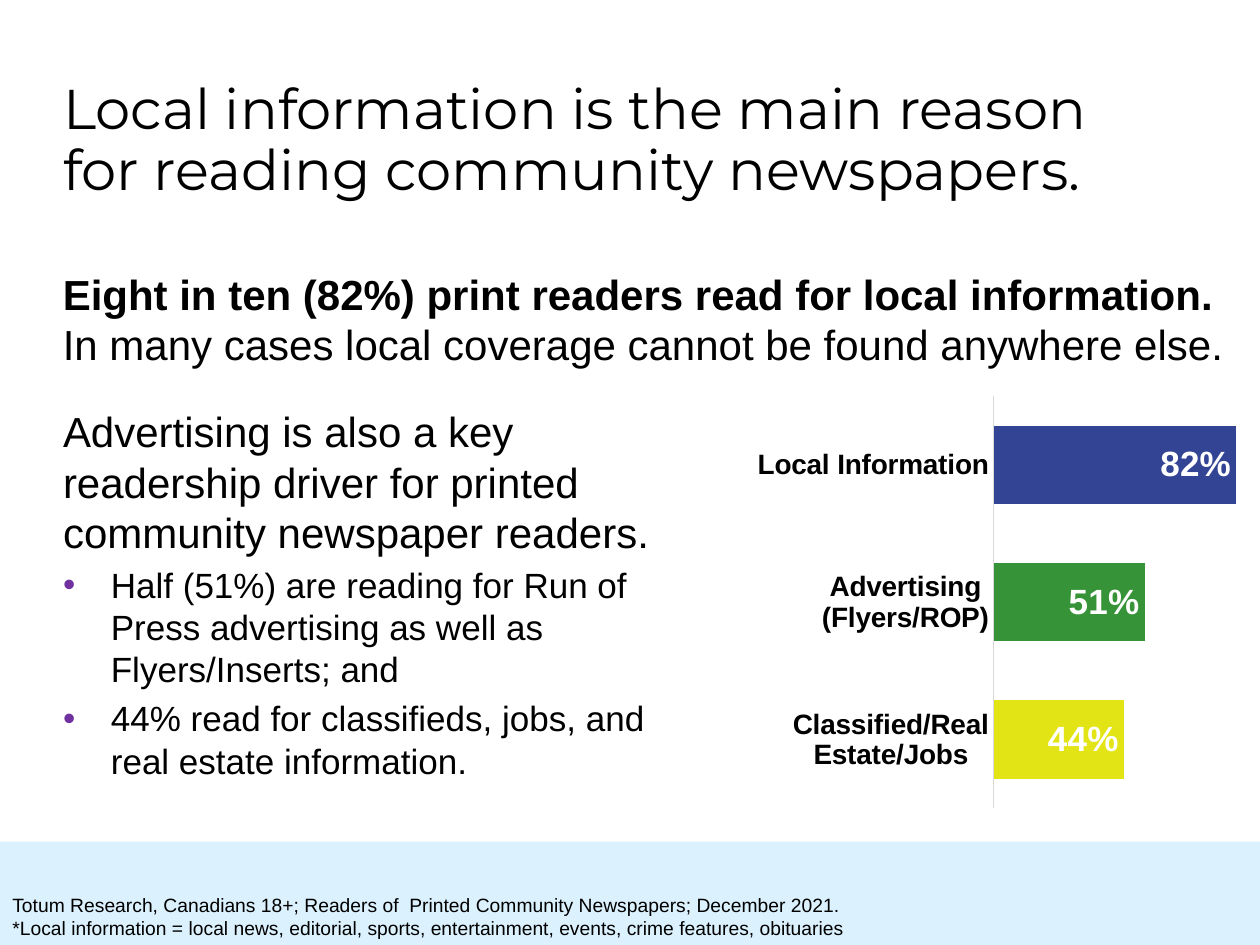
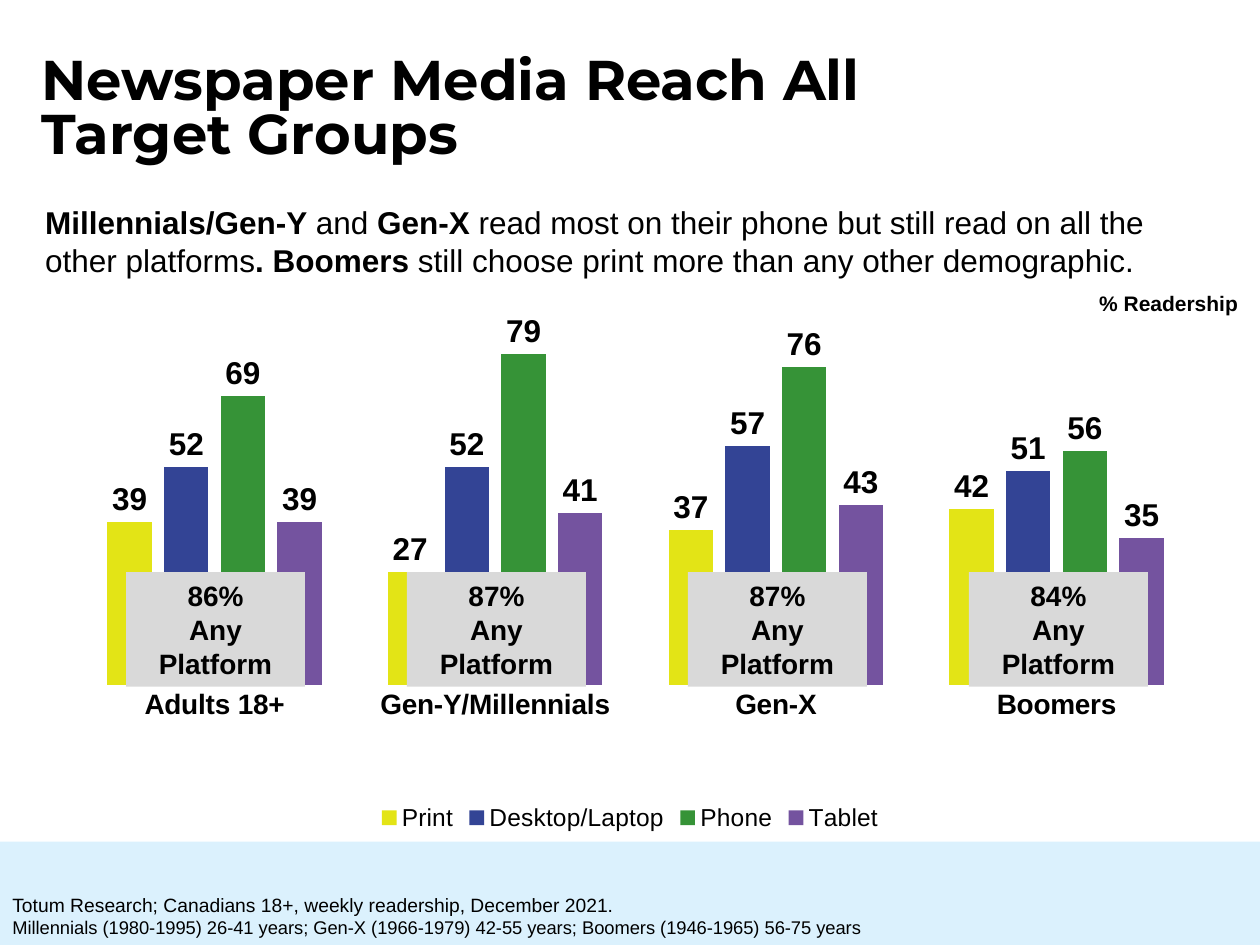
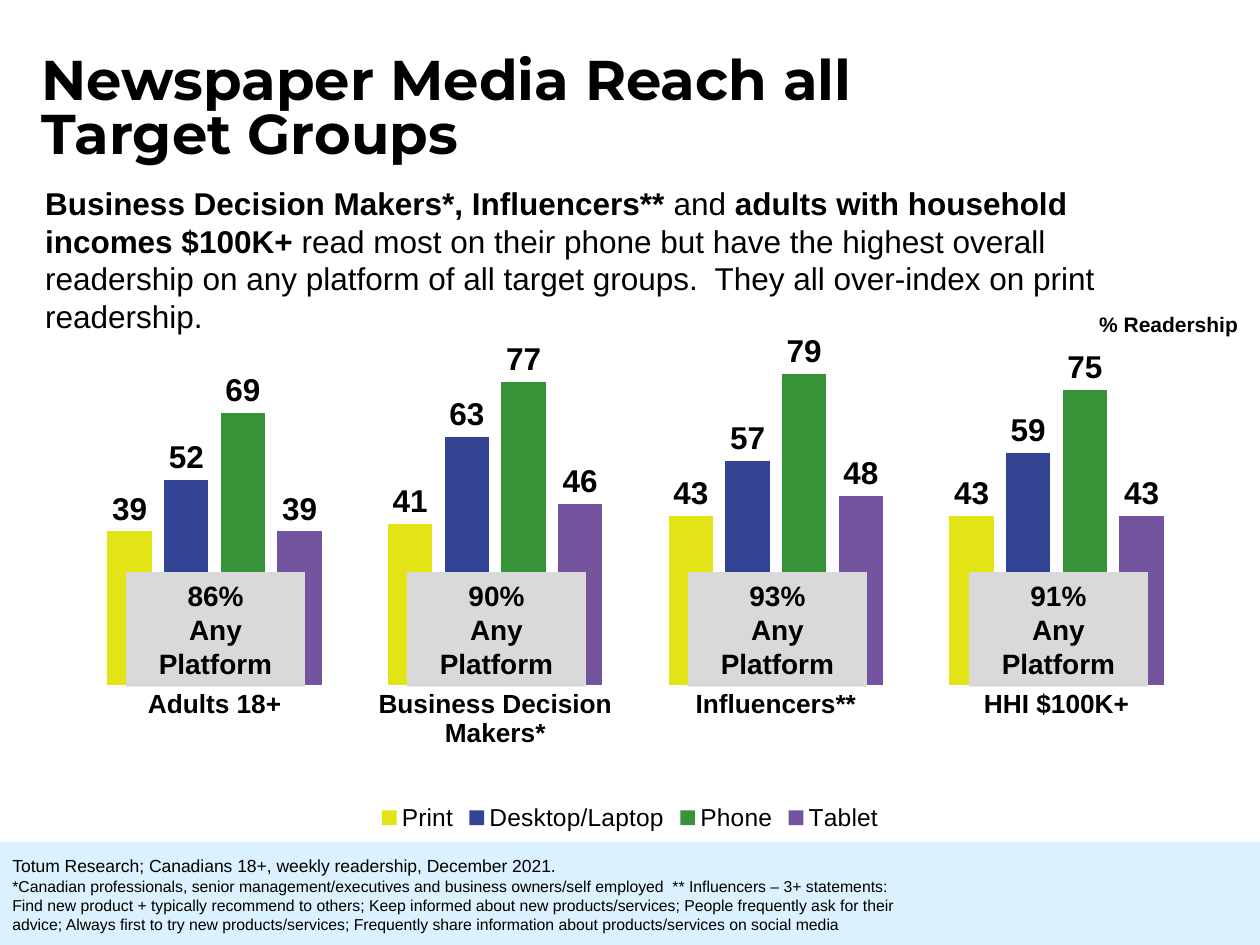
from dataclasses import dataclass

from lxml import etree
from pptx import Presentation
from pptx.chart.data import CategoryChartData
from pptx.dml.color import RGBColor
from pptx.enum.chart import XL_CHART_TYPE, XL_LABEL_POSITION, XL_LEGEND_POSITION, XL_TICK_MARK
from pptx.enum.shapes import MSO_SHAPE
from pptx.enum.text import MSO_ANCHOR, MSO_AUTO_SIZE, PP_ALIGN
from pptx.oxml.ns import qn
from pptx.util import Inches, Pt

BAR, COLUMN = XL_CHART_TYPE.BAR_CLUSTERED, XL_CHART_TYPE.COLUMN_CLUSTERED
INSIDE_END, OUTSIDE_END = XL_LABEL_POSITION.INSIDE_END, XL_LABEL_POSITION.OUTSIDE_END
LEGEND_BOTTOM, NO_TICK = XL_LEGEND_POSITION.BOTTOM, XL_TICK_MARK.NONE
RECTANGLE = MSO_SHAPE.RECTANGLE
TOP, MIDDLE = MSO_ANCHOR.TOP, MSO_ANCHOR.MIDDLE
NO_FIT = MSO_AUTO_SIZE.NONE
LEFT, CENTER = PP_ALIGN.LEFT, PP_ALIGN.CENTER
TITLE_AND_CONTENT, TITLE_ONLY = 1, 5


def rgb(value):
    return RGBColor.from_string(value)


@dataclass(frozen=True)
class Theme:
    heading_font: str = "Montserrat"
    body_font: str = "Arial"
    text: RGBColor = rgb("000000")
    white: RGBColor = rgb("FFFFFF")
    band: RGBColor = rgb("DBF1FD")
    badge: RGBColor = rgb("D9D9D9")
    axis: RGBColor = rgb("D9D9D9")
    yellow: RGBColor = rgb("E3E416")
    blue: RGBColor = rgb("334495")
    green: RGBColor = rgb("369337")
    purple: RGBColor = rgb("74539F")
    bullet: str = "7030A0"
    title_size: float = 32
    lead_size: float = 24
    list_size: float = 20
    intro_size: float = 18
    label_size: float = 16
    legend_size: float = 14
    note_size: float = 12


T = Theme()
PLATFORM_COLORS = {"Print": T.yellow, "Desktop/Laptop": T.blue,
                   "Phone": T.green, "Tablet": T.purple}


def set_all(target, **values):
    for name, value in values.items():
        setattr(target, name, value)


def style_font(font, size, bold=False, color=T.text, name=T.body_font):
    set_all(font, size=Pt(size), bold=bold, name=name)
    font.color.rgb = color


def place(shape, box):
    for name, value in zip(("left", "top", "width", "height"), box):
        setattr(shape, name, Inches(value))


def write(p, runs, size, align=LEFT, name=T.body_font):
    """Fill a paragraph with (text, bold) runs."""
    p.alignment = align
    for text, bold in runs:
        r = p.add_run()
        r.text = text
        style_font(r.font, size, bold, name=name)


def write_lines(tf, lines, align=LEFT):
    """Write one paragraph per (runs, size) line."""
    for i, (runs, size) in enumerate(lines):
        write(tf.add_paragraph() if i else tf.paragraphs[0], runs, size, align)


def add_text(s, box, lines, align=LEFT):
    tf = s.shapes.add_textbox(*map(Inches, box)).text_frame
    tf.word_wrap = True
    write_lines(tf, lines, align)


def add_rectangle(s, box, fill):
    sp = s.shapes.add_shape(RECTANGLE, *map(Inches, box))
    sp.shadow.inherit = False
    sp.fill.solid()
    sp.fill.fore_color.rgb = fill
    sp.line.fill.background()
    return sp


def add_slide(prs, layout, title, box, spacing, bold=False, anchor=TOP):
    """Start a slide with its title and the footer band."""
    s = prs.slides.add_slide(prs.slide_layouts[layout])
    place(s.shapes.title, box)
    tf = s.shapes.title.text_frame
    set_all(tf, word_wrap=True, auto_size=NO_FIT, vertical_anchor=anchor)
    p = tf.paragraphs[0]
    p.line_spacing = spacing
    write(p, [(title, bold)], T.title_size, name=T.heading_font)
    add_rectangle(s, (0, 6.68, 10, 0.82), T.band)
    return s


def set_bullet(p, indent=0.38):
    pPr = p._p.get_or_add_pPr()
    pPr.set("marL", str(Inches(indent)))
    pPr.set("indent", str(-Inches(indent)))
    color = etree.SubElement(pPr, qn("a:buClr"))
    etree.SubElement(color, qn("a:srgbClr")).set("val", T.bullet)
    etree.SubElement(pPr, qn("a:buChar")).set("char", "•")


def clear_bullet(p):
    pPr = p._p.get_or_add_pPr()
    pPr.set("marL", "0")
    pPr.set("indent", "0")
    etree.SubElement(pPr, qn("a:buNone"))


def fill_body(s, box, lead, bullets):
    body = s.placeholders[1]
    place(body, box)
    tf = body.text_frame
    set_all(tf, word_wrap=True, auto_size=NO_FIT, vertical_anchor=TOP)
    p = tf.paragraphs[0]
    p.space_before = Pt(0)
    clear_bullet(p)
    write(p, [(lead, False)], T.lead_size)
    for text in bullets:
        p = tf.add_paragraph()
        p.space_before = Pt(4)
        set_bullet(p)
        write(p, [(text, False)], T.list_size)


def set_plot_layout(chart, area):
    """Fix the inner plot area, as fractions of the chart."""
    plot_area = chart._chartSpace.chart.plotArea
    for old in plot_area.findall(qn("c:layout")):
        plot_area.remove(old)
    layout = etree.Element(qn("c:layout"))
    manual = etree.SubElement(layout, qn("c:manualLayout"))
    values = {"layoutTarget": "inner", "xMode": "edge", "yMode": "edge",
              **dict(zip("xywh", area))}
    for tag, value in values.items():
        etree.SubElement(manual, qn(f"c:{tag}")).set("val", str(value))
    plot_area.insert(0, layout)


def add_bars(s, kind, box, categories, series, area, top, gap, cat_size, number_format="General"):
    data = CategoryChartData(number_format=number_format)
    data.categories = categories
    for name, values in series.items():
        data.add_series(name, values)
    chart = s.shapes.add_chart(kind, *map(Inches, box), data).chart
    set_all(chart, has_title=False, has_legend=False)
    style_font(chart.font, T.intro_size)
    set_plot_layout(chart, area)
    set_all(chart.plots[0], gap_width=gap, vary_by_categories=False)
    set_all(chart.value_axis, visible=False, has_major_gridlines=False,
            minimum_scale=0, maximum_scale=top)
    set_all(chart.category_axis, major_tick_mark=NO_TICK, has_major_gridlines=False)
    style_font(chart.category_axis.tick_labels.font, cat_size, True)
    return chart


def fill_bar(part, color):
    part.format.fill.solid()
    part.format.fill.fore_color.rgb = color


def label_series(series, position, size, color=T.text, number_format="General"):
    labels = series.data_labels
    set_all(labels, show_value=True, position=position,
            number_format=number_format, number_format_is_linked=False)
    style_font(labels.font, size, True, color)


def add_reasons_chart(s):
    reasons = {"Classified/Real Estate/Jobs": (0.44, T.yellow),
               "Advertising (Flyers/ROP)": (0.51, T.green),
               "Local Information": (0.82, T.blue)}
    chart = add_bars(s, BAR, (5.6, 3.04, 4.4, 3.48), list(reasons),
                     {"Series 1": [value for value, _ in reasons.values()]},
                     (0.52, 0.03, 0.48, 0.94), 0.9, 75, T.label_size, "0%")
    line = chart.category_axis.format.line
    line.color.rgb = T.axis
    line.width = Pt(0.75)
    series = chart.plots[0].series[0]
    for i, (_, color) in enumerate(reasons.values()):
        fill_bar(series.points[i], color)
    label_series(series, INSIDE_END, T.list_size, T.white, "0%")


def add_platform_chart(s, groups, plot_top, cat_size):
    """Chart each group's four platform values; groups maps name to (values, any-platform share)."""
    columns = zip(*(values for values, _ in groups.values()))
    chart = add_bars(s, COLUMN, (0.5, 1.81, 9, 4.83), list(groups),
                     dict(zip(PLATFORM_COLORS, columns)),
                     (0.01, plot_top, 0.99, round(0.751 - plot_top, 3)), 90, 150, cat_size)
    chart.plots[0].overlap = -28
    chart.category_axis.format.line.fill.background()
    for series in chart.plots[0].series:
        fill_bar(series, PLATFORM_COLORS[series.name])
        label_series(series, OUTSIDE_END, T.intro_size)
    chart.has_legend = True
    set_all(chart.legend, position=LEGEND_BOTTOM, include_in_layout=False)
    style_font(chart.legend.font, T.legend_size)


def add_badges(s, groups):
    for i, (_, share) in enumerate(groups.values()):
        badge = add_rectangle(s, (1 + 2.23 * i, 4.54, 1.42, 0.91), T.badge)
        set_all(badge.text_frame, word_wrap=True, vertical_anchor=MIDDLE)
        write_lines(badge.text_frame, [([(text, True)], T.label_size)
                                       for text in (f"{share}%", "Any Platform")], CENTER)


def add_footnote(s, box, *lines):
    add_text(s, box, [([(text, False)], size) for text, size in lines])


def add_reach_slide(prs, title, intro, intro_box, groups, plot_top, cat_size, unit_top):
    s = add_slide(prs, TITLE_ONLY, title, (0.23, 0.41, 8.2, 0.98), 0.8, bold=True)
    add_platform_chart(s, groups, plot_top, cat_size)
    add_text(s, intro_box, [(intro, T.intro_size)])
    add_text(s, (8.6, unit_top, 1.35, 0.3), [([("% Readership", True)], T.note_size)], CENTER)
    add_badges(s, groups)
    return s


def add_reasons_slide(prs):
    s = add_slide(prs, TITLE_AND_CONTENT,
                  "Local information is the main reason for reading community newspapers.",
                  (0.4, 0.4, 8.38, 1.45), 0.9, anchor=MIDDLE)
    fill_body(s, (0.4, 3.17, 5.13, 3.34),
              "Advertising is also a key readership driver for printed community newspaper readers.",
              ["Half (51%) are reading for Run of Press advertising as well as Flyers/Inserts; and",
               "44% read for classifieds, jobs, and real estate information."])
    add_reasons_chart(s)
    add_text(s, (0.4, 2.08, 9.42, 1.21), [
        ([("Eight in ten (82%) print readers read for local information.", True)], T.lead_size),
        ([("In many cases local coverage cannot be found anywhere else.", False)], T.lead_size)])
    add_footnote(
        s, (0, 7.04, 7.57, 0.47),
        ("Totum Research, Canadians 18+; Readers of  Printed Community Newspapers; "
         "December 2021.", 11),
        ("*Local information = local news, editorial, sports, entertainment, events, "
         "crime features, obituaries", 11))


def add_generations_slide(prs):
    groups = {"Adults 18+": ((39, 52, 69, 39), 86),
              "Gen-Y/Millennials": ((27, 52, 79, 41), 87),
              "Gen-X": ((37, 57, 76, 43), 87),
              "Boomers": ((42, 51, 56, 35), 84)}
    intro = [("Millennials/Gen-Y ", True), ("and", False), (" Gen-X ", True),
             ("read most on their phone but still read on all the other platforms", False),
             (". Boomers", True),
             (" still choose print more than any other demographic.", False)]
    s = add_reach_slide(prs, "Newspaper Media Reach All Target Groups", intro,
                        (0.26, 1.56, 9.33, 0.71), groups, 0.132, T.label_size, 2.26)
    add_footnote(
        s, (0, 7.04, 8.17, 0.47),
        ("Totum Research; Canadians 18+, weekly readership, December 2021.", 11),
        ("Millennials (1980-1995) 26-41 years; Gen-X (1966-1979) 42-55 years; "
         "Boomers (1946-1965) 56-75 years", 10.5))


def add_influence_slide(prs):
    groups = {"Adults 18+": ((39, 52, 69, 39), 86),
              "Business Decision Makers*": ((41, 63, 77, 46), 90),
              "Influencers**": ((43, 57, 79, 48), 93),
              "HHI $100K+": ((43, 59, 75, 43), 91)}
    intro = [("Business Decision Makers*, Influencers** ", True), ("and", False),
             (" adults with household incomes $100K+ ", True),
             ("read most on their phone but have the highest overall readership on any "
              "platform of all target groups.  They all over-index on print readership.", False)]
    s = add_reach_slide(prs, "Newspaper Media Reach all Target Groups", intro,
                        (0.26, 1.41, 9.33, 1.31), groups, 0.169, 15, 2.42)
    add_footnote(
        s, (0, 6.74, 7.24, 0.72),
        ("Totum Research; Canadians 18+, weekly readership, December 2021.", 10),
        ("*Canadian professionals, senior management/executives and business owners/self "
         "employed  ** Influencers – 3+ statements: Find new product + typically recommend "
         "to others; Keep informed about new products/services; People frequently ask for "
         "their advice; Always first to try new products/services; Frequently share "
         "information about products/services on social media", 9))


def main():
    prs = Presentation()
    set_all(prs, slide_width=Inches(10), slide_height=Inches(7.5))
    add_reasons_slide(prs)
    add_generations_slide(prs)
    add_influence_slide(prs)
    prs.save("out.pptx")


if __name__ == "__main__":
    main()
